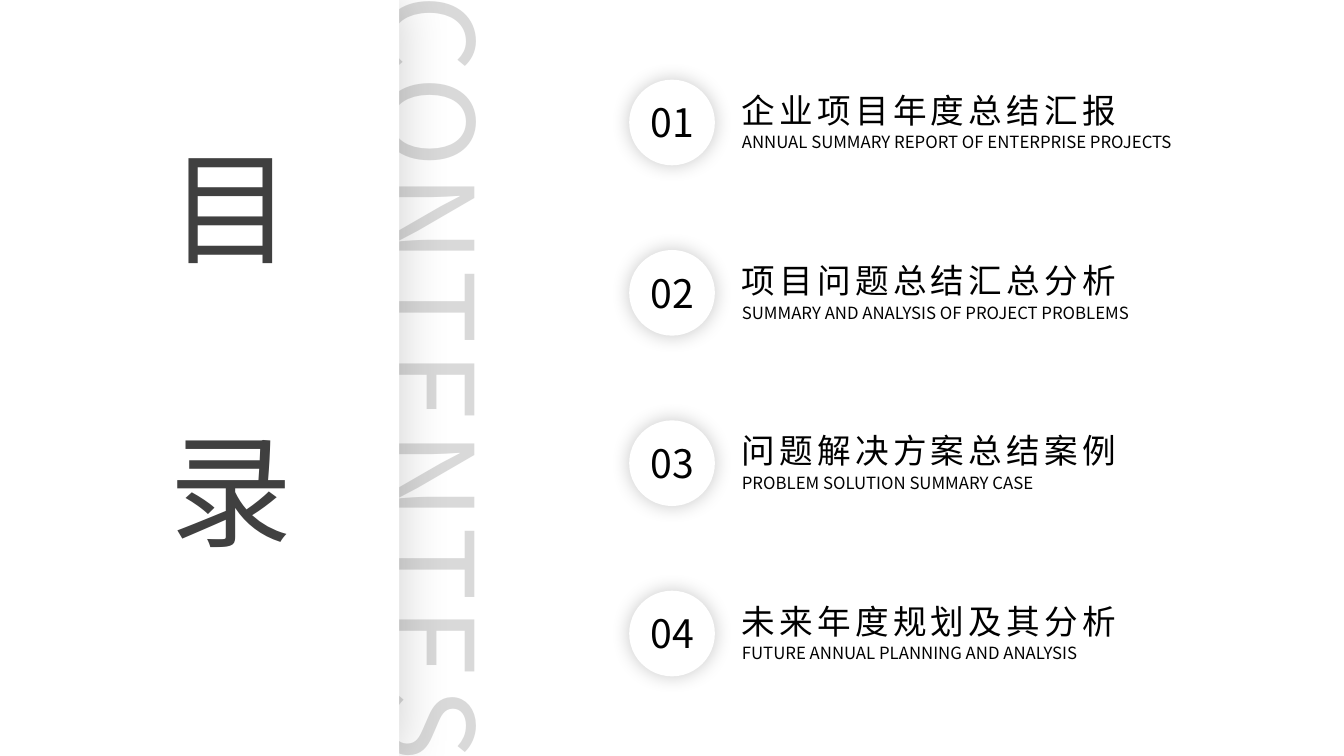
"""Build a contents slide with a shadowed title panel and four numbered chapters."""
from lxml import etree
from pptx import Presentation
from pptx.dml.color import RGBColor
from pptx.enum import shapes, text
from pptx.oxml import ns
from pptx.util import Inches, Pt

FONT = "Noto Sans CJK SC"
COLORS = {"white": "FFFFFF", "black": "000000", "title": "404040", "backdrop": "D9D9D9"}
BACKDROP = "CONTENTES"
TITLE = ["目", "录"]
CHAPTERS = [
    ("企业项目年度总结汇报", "ANNUAL SUMMARY REPORT OF ENTERPRISE PROJECTS"),
    ("项目问题总结汇总分析", "SUMMARY AND ANALYSIS OF PROJECT PROBLEMS"),
    ("问题解决方案总结案例", "PROBLEM SOLUTION SUMMARY CASE"),
    ("未来年度规划及其分析", "FUTURE ANNUAL PLANNING AND ANALYSIS"),
]
TITLE_TOP, TITLE_STEP = 1.25, 2.81
CHAPTER_TOP, CHAPTER_STEP = 0.79, 1.69


def add_text(slide, content, box, size, color="black", center=False, spacing=0):
    sp = slide.shapes.add_textbox(*map(Inches, box))
    tf = sp.text_frame
    tf.word_wrap = True
    tf.auto_size = text.MSO_AUTO_SIZE.SHAPE_TO_FIT_TEXT
    p = tf.paragraphs[0]
    p.text = content
    p.alignment = text.PP_ALIGN.CENTER if center else text.PP_ALIGN.LEFT
    p.font.size = Pt(size)
    p.font.name = FONT
    p.font.color.rgb = RGBColor.from_string(COLORS[color])
    for props in sp.element.iter(ns.qn("a:defRPr")):
        etree.SubElement(props, ns.qn("a:ea"), typeface=FONT)
        if spacing:
            props.set("spc", str(spacing * 100))
    return sp


def add_shadowed(slide, kind, box, opacity, blur, distance=0):
    sp = slide.shapes.add_shape(kind, *map(Inches, box))
    sp.fill.solid()
    sp.fill.fore_color.rgb = RGBColor.from_string(COLORS["white"])
    sp.line.fill.background()
    sp.shadow.inherit = False
    effects = sp.element.spPr.find(ns.qn("a:effectLst"))
    shadow = etree.SubElement(
        effects, ns.qn("a:outerShdw"), blurRad=str(Pt(blur)), dist=str(Pt(distance)),
        dir="0", algn="ctr", rotWithShape="0")
    color = etree.SubElement(shadow, ns.qn("a:srgbClr"), val=COLORS["black"])
    etree.SubElement(color, ns.qn("a:alpha"), val=str(opacity * 1000))


def main():
    prs = Presentation()
    prs.slide_width, prs.slide_height = Inches(13.33), Inches(7.5)
    slide = prs.slides.add_slide(prs.slide_layouts[6])

    backdrop = add_text(slide, BACKDROP, (-0.88, 2.96, 10.34, 1.58), 88, "backdrop", True, 5)
    backdrop.rotation = 90
    add_shadowed(slide, shapes.MSO_SHAPE.RECTANGLE, (0, 0, 3.96, 7.5), 16, 36, 3)
    for i, char in enumerate(TITLE):
        add_text(slide, char, (1.58, TITLE_TOP + i * TITLE_STEP, 0.81, 1.58), 88, "title", True)

    for i, (heading, subtitle) in enumerate(CHAPTERS):
        top = CHAPTER_TOP + i * CHAPTER_STEP
        add_shadowed(slide, shapes.MSO_SHAPE.OVAL, (6.24, top, 0.85, 0.85), 22, 14)
        add_text(slide, f"{i + 1:02}", (6.16, top + 0.14, 1.02, 0.57), 28, center=True)
        add_text(slide, heading, (7.26, top + 0.05, 4.21, 0.5), 24, spacing=3)
        add_text(slide, subtitle, (7.26, top + 0.47, 4.58, 0.3), 12)

    prs.save("out.pptx")


if __name__ == "__main__":
    main()
